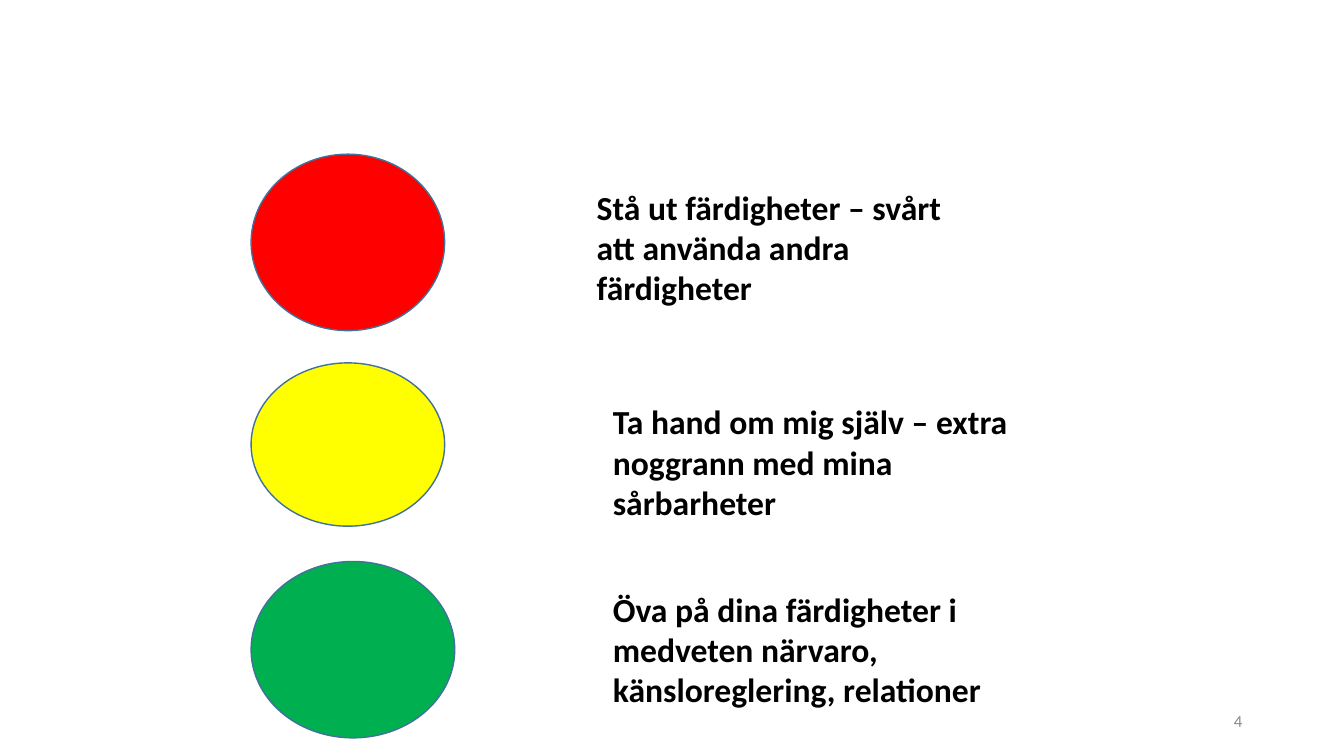
from pptx import Presentation
from pptx.dml.color import RGBColor
from pptx.enum.shapes import MSO_SHAPE
from pptx.enum.text import MSO_ANCHOR, PP_ALIGN
from pptx.util import Inches, Pt

COLOURS = {
    "red": "FF0000",
    "yellow": "FFFF00",
    "green": "00B050",
    "outline": "42719B",
    "text": "000000",
    "number": "888888",
}

LIGHT_LEFT = 2.49
LABEL_HEIGHT = 1.31

LIGHTS = [
    ("red", (1.53, 1.92, 1.75), (5.82, 1.8, 3.64),
     "Stå ut färdigheter – svårt att använda andra färdigheter"),
    ("yellow", (3.6, 1.92, 1.62), (5.98, 3.93, 4.2),
     "Ta hand om mig själv – extra noggrann med mina sårbarheter"),
    ("green", (5.57, 2.02, 1.75), (5.98, 5.79, 4.6),
     "Öva på dina färdigheter i medveten närvaro, känsloreglering, relationer"),
]


class SlideBuilder:
    font_name = "Calibri"

    def __init__(self, page):
        self.page = page

    def colour(self, name):
        return RGBColor.from_string(COLOURS[name])

    def light(self, left, top, width, height, fill):
        shape = self.page.shapes.add_shape(
            MSO_SHAPE.OVAL, Inches(left), Inches(top), Inches(width), Inches(height))
        shape.shadow.inherit = False
        shape.fill.solid()
        shape.fill.fore_color.rgb = self.colour(fill)
        shape.line.color.rgb = self.colour("outline")
        shape.line.width = Pt(1)

    def text(self, left, top, width, height, words, size=24, colour="text",
             bold=True, align=PP_ALIGN.LEFT, anchor=MSO_ANCHOR.TOP):
        box = self.page.shapes.add_textbox(
            Inches(left), Inches(top), Inches(width), Inches(height))
        frame = box.text_frame
        frame.word_wrap = True
        frame.vertical_anchor = anchor
        paragraph = frame.paragraphs[0]
        paragraph.text = words
        paragraph.alignment = align
        paragraph.font.name = self.font_name
        paragraph.font.size = Pt(size)
        paragraph.font.bold = bold
        paragraph.font.color.rgb = self.colour(colour)


def main():
    deck = Presentation()
    deck.slide_width = Inches(13.33)
    deck.slide_height = Inches(7.5)
    builder = SlideBuilder(deck.slides.add_slide(deck.slide_layouts[6]))
    for fill, (top, width, height), label_place, words in LIGHTS:
        builder.light(LIGHT_LEFT, top, width, height, fill)
        builder.text(*label_place, LABEL_HEIGHT, words)
    builder.text(9.42, 6.95, 3, 0.4, "4", size=12, colour="number", bold=False,
                 align=PP_ALIGN.RIGHT, anchor=MSO_ANCHOR.MIDDLE)
    deck.save("out.pptx")


if __name__ == "__main__":
    main()
